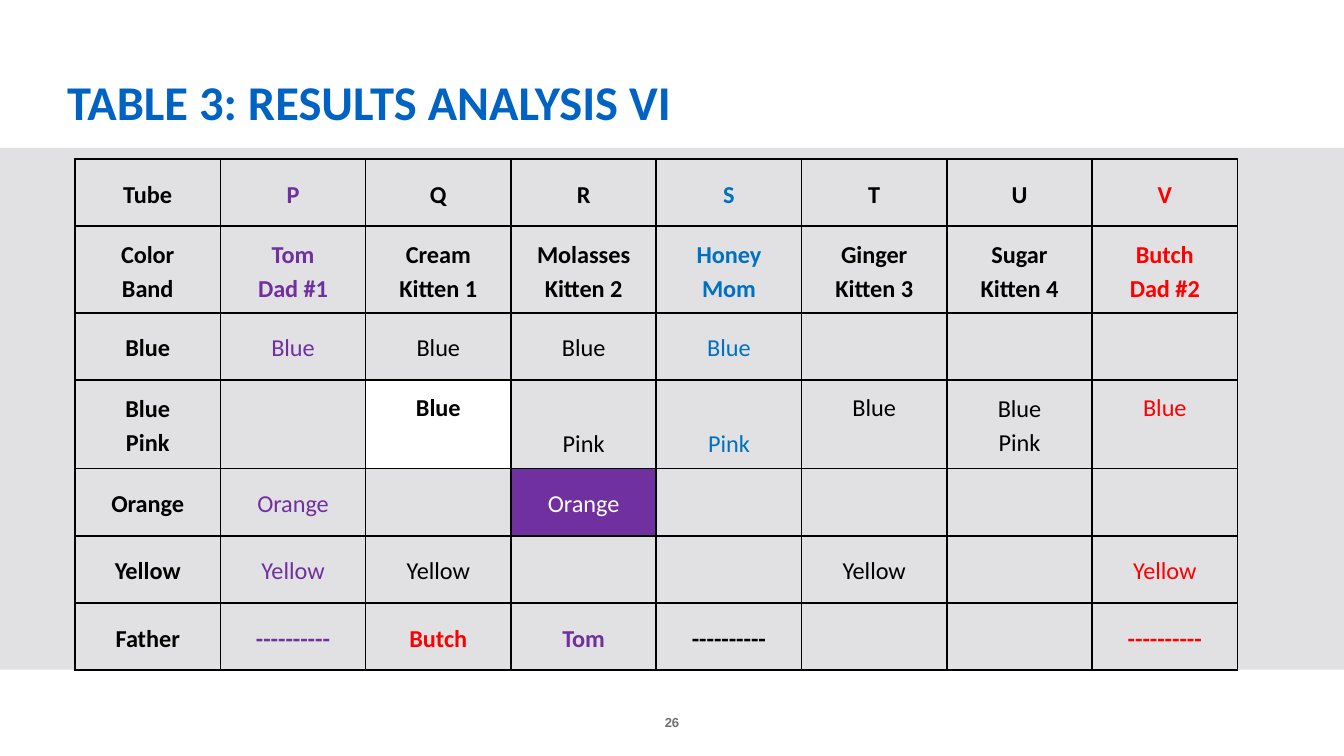
from lxml import etree
from pptx import Presentation
from pptx.dml.color import RGBColor
from pptx.enum.shapes import MSO_SHAPE
from pptx.enum.text import MSO_ANCHOR, MSO_AUTO_SIZE, PP_ALIGN
from pptx.oxml.ns import qn
from pptx.util import Pt

RECT = MSO_SHAPE.RECTANGLE
TOP, MIDDLE, BOTTOM = MSO_ANCHOR.TOP, MSO_ANCHOR.MIDDLE, MSO_ANCHOR.BOTTOM
LEFT, CENTER = PP_ALIGN.LEFT, PP_ALIGN.CENTER
FIXED = MSO_AUTO_SIZE.NONE

THEME = {
    "font": "Calibri", "page_font": "Arial",
    "title_size": 26, "cell_size": 13, "page_size": 7,
    "title": "0063C3", "page": "716F73", "band": "E1E1E3",
    "black": "000000", "white": "FFFFFF",
    "purple": "7030A0", "blue": "0070C0", "red": "FF0000",
}

TITLE = "TABLE 3: RESULTS ANALYSIS VI"
PAGE = "26"
DASH = "----------"
ROWS = [
    ["Tube", "P", "Q", "R", "S", "T", "U", "V"],
    ["Color\nBand", "Tom\nDad #1", "Cream\nKitten 1", "Molasses\nKitten 2",
     "Honey\nMom", "Ginger\nKitten 3", "Sugar\nKitten 4", "Butch\nDad #2"],
    ["Blue", "Blue", "Blue", "Blue", "Blue", "", "", ""],
    ["Blue\nPink", "", "Blue", "Pink", "Pink", "Blue", "Blue\nPink", "Blue"],
    ["Orange", "Orange", "", "Orange", "", "", "", ""],
    ["Yellow", "Yellow", "Yellow", "", "", "Yellow", "", "Yellow"],
    ["Father", DASH, "Butch", "Tom", DASH, "", "", DASH],
]
BOLD_ROWS = (0, 1, 6)
PAIR_ROW = 3  # one line per band: Blue above, Pink below
PAIR_SIDE = {"Blue": TOP, "Pink": BOTTOM}

# Column colours, then exceptions by (row, column)
COL_INK = {1: "purple", 4: "blue", 7: "red"}
CELL_INK = {(4, 3): "white", (6, 2): "red", (6, 3): "purple",
            (6, 4): "black"}
CELL_FILL = {(3, 2): "white", (4, 3): "purple"}
BOLD_CELLS = ((3, 2),)

# Lengths in points
WIDE, HIGH = 720, 405
GRID_X, GRID_Y, GRID_W = 40.2, 85.2, 622.8
ROW_H = [36, 46, 36, 47.5, 36, 36, 36]
INSET = 5


def color(name):
    return RGBColor.from_string(THEME[name])


def style(frame, font, size, ink, bold, align, space=1.0):
    for para in frame.paragraphs:
        para.alignment = align
        para.line_spacing = space
        for run in para.runs:
            run.font.name = font
            run.font.size = Pt(size)
            run.font.bold = bold
            run.font.color.rgb = color(ink)


def add_edges(cell):
    """Draw a thin black line on all four sides of a cell."""
    props = cell._tc.get_or_add_tcPr()
    for side in ("lnL", "lnR", "lnT", "lnB"):
        line = etree.SubElement(props, qn("a:" + side), w=str(Pt(1)))
        fill = etree.SubElement(line, qn("a:solidFill"))
        etree.SubElement(fill, qn("a:srgbClr"), val=THEME["black"])


def fill_cell(cell, row, col):
    text = ROWS[row][col]
    add_edges(cell)
    if (row, col) in CELL_FILL:
        cell.fill.solid()
        cell.fill.fore_color.rgb = color(CELL_FILL[row, col])
    else:
        cell.fill.background()
    cell.margin_left = cell.margin_right = Pt(INSET)
    cell.margin_top = cell.margin_bottom = Pt(INSET)
    cell.vertical_anchor = (
        PAIR_SIDE.get(text, MIDDLE) if row == PAIR_ROW else MIDDLE)
    cell.text_frame.text = text
    ink = CELL_INK.get((row, col), COL_INK.get(col, "black"))
    bold = row in BOLD_ROWS or col == 0 or (row, col) in BOLD_CELLS
    style(cell.text_frame, THEME["font"], THEME["cell_size"], ink, bold,
          CENTER, 1.15)


def add_band(slide):
    band = slide.shapes.add_shape(RECT, 0, Pt(79.2), Pt(WIDE), Pt(279.6))
    band.shadow.inherit = False
    band.fill.solid()
    band.fill.fore_color.rgb = color("band")
    band.line.fill.background()


def add_title(slide):
    title = slide.shapes.title
    title.left, title.top = Pt(28.8), Pt(34.5)
    title.width, title.height = Pt(662.4), Pt(39)
    frame = title.text_frame
    frame.text = TITLE
    frame.auto_size = FIXED
    frame.vertical_anchor = BOTTOM
    style(frame, THEME["font"], THEME["title_size"], "title", True, LEFT)


def add_grid(slide):
    cols = len(ROWS[0])
    table = slide.shapes.add_table(
        len(ROWS), cols, Pt(GRID_X), Pt(GRID_Y), Pt(GRID_W),
        Pt(sum(ROW_H))).table
    table.first_row = table.horz_banding = False
    for col in table.columns:
        col.width = Pt(GRID_W / cols)
    for row, high in enumerate(ROW_H):
        table.rows[row].height = Pt(high)
        for col in range(cols):
            fill_cell(table.cell(row, col), row, col)


def add_page(slide):
    frame = slide.shapes.add_textbox(
        Pt(327), Pt(369.4), Pt(66), Pt(21.6)).text_frame
    frame.word_wrap = True
    frame.margin_left = frame.margin_right = 0
    frame.margin_top = frame.margin_bottom = 0
    frame.vertical_anchor = BOTTOM
    frame.text = PAGE
    style(frame, THEME["page_font"], THEME["page_size"], "page", True, CENTER)


def main():
    deck = Presentation()
    deck.slide_width, deck.slide_height = Pt(WIDE), Pt(HIGH)
    slide = deck.slides.add_slide(deck.slide_layouts[5])
    add_band(slide)
    add_title(slide)
    add_grid(slide)
    add_page(slide)
    deck.save("out.pptx")


if __name__ == "__main__":
    main()
